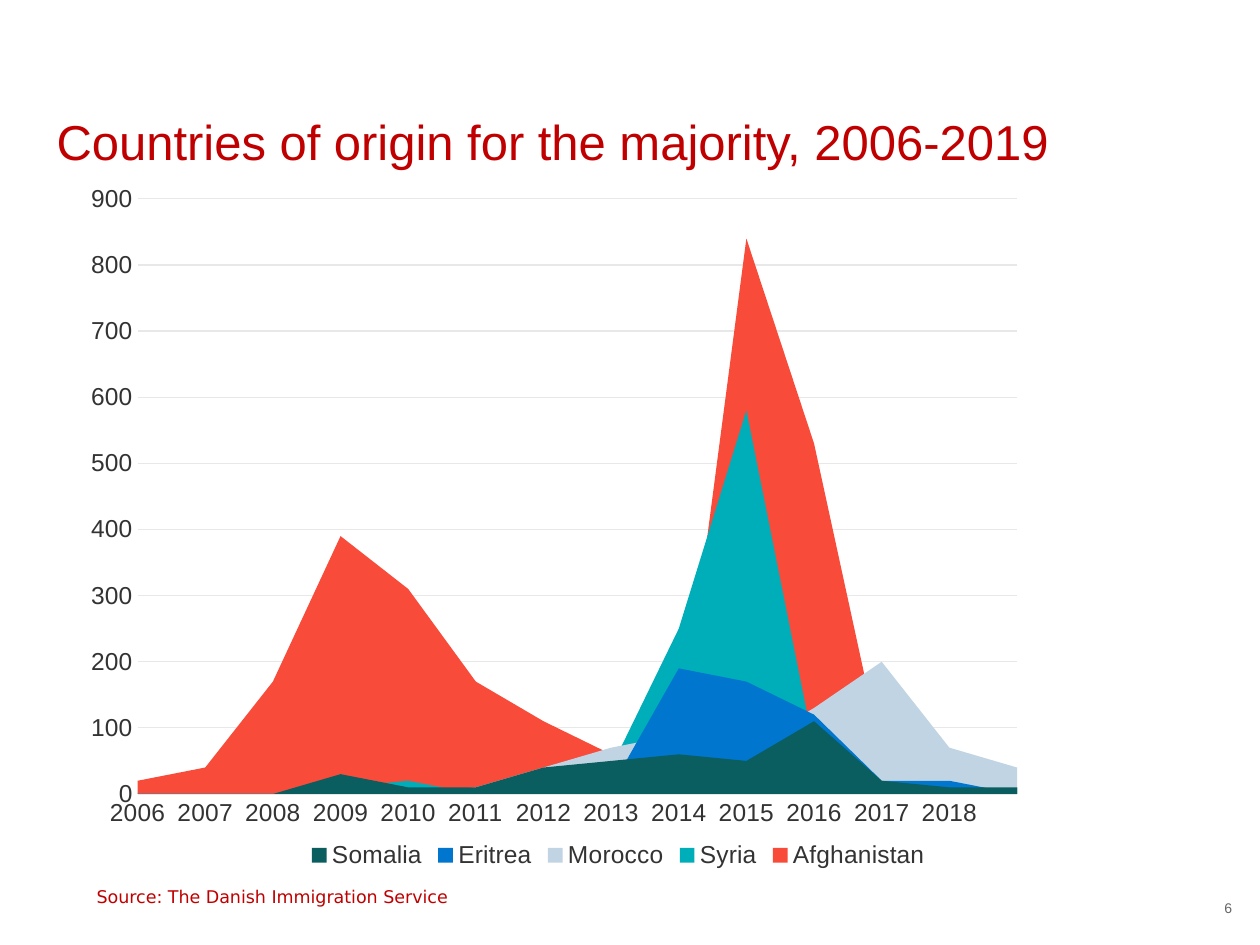
from lxml.etree import SubElement
from pptx import Presentation
from pptx.chart.data import CategoryChartData
from pptx.dml.color import RGBColor
from pptx.enum.chart import XL_CHART_TYPE, XL_LEGEND_POSITION, XL_TICK_MARK
from pptx.enum.text import MSO_ANCHOR, PP_ALIGN
from pptx.oxml.ns import qn
from pptx.util import Cm, Pt

YEARS = [str(year) for year in range(2006, 2019)] + [""]
COUNTRIES = [
    ("Somalia", "0A5E60", [0, 0, 0, 30, 10, 10, 40, 50, 60, 50, 110, 20, 10, 10]),
    ("Eritrea", "0076CE", [None, None, 0, 0, 0, 0, 0, 10, 190, 170, 120, 20, 20, 0]),
    ("Morocco", "C1D4E3", [None, None, 0, 10, 0, 10, 40, 70, 90, 70, 130, 200, 70, 40]),
    ("Syria", "00AEB9", [0, 0, 0, 10, 20, 0, 10, 40, 250, 580, 70, 40, 20, 10]),
    ("Afghanistan", "F94B3A", [20, 40, 170, 390, 310, 170, 110, 60, 60, 840, 530, 60, 20, 10]),
]
PLOT_LAYOUT = {"x": 0.066, "y": 0.02, "w": 0.794, "h": 0.864}


def color(value):
    return RGBColor.from_string(value)


class SlideBuilder:
    font_name = "Arial"
    accent = "C00000"
    chart_text = "333333"
    grid = "E8E8E8"

    def __init__(self, slide):
        self.slide = slide

    def style_font(self, font, size, value, name=None):
        font.name = name or self.font_name
        font.size = Pt(size)
        font.color.rgb = color(value)

    def text(self, box, content, size, value, name=None,
             align=PP_ALIGN.LEFT, anchor=MSO_ANCHOR.TOP, wrap=True):
        shape = self.slide.shapes.add_textbox(*(Cm(length) for length in box))
        frame = shape.text_frame
        frame.word_wrap = wrap
        frame.vertical_anchor = anchor
        paragraph = frame.paragraphs[0]
        paragraph.alignment = align
        run = paragraph.add_run()
        run.text = content
        self.style_font(run.font, size, value, name)

    def area_chart(self, box, categories, countries):
        data = CategoryChartData()
        data.categories = categories
        for name, _, values in countries:
            data.add_series(name, values)
        chart = self.slide.shapes.add_chart(
            XL_CHART_TYPE.AREA, *(Cm(length) for length in box), data).chart
        chart.has_title = False
        self.style_font(chart.font, 14, self.chart_text)
        for series, (_, fill, _) in zip(chart.plots[0].series, countries):
            series.format.fill.solid()
            series.format.fill.fore_color.rgb = color(fill)
            series.format.line.fill.background()
        self.axes(chart)
        self.legend(chart)
        self.plot_layout(chart)

    def axes(self, chart):
        for axis in (chart.category_axis, chart.value_axis):
            axis.major_tick_mark = axis.minor_tick_mark = XL_TICK_MARK.NONE
            self.style_font(axis.tick_labels.font, 14, self.chart_text)
        chart.category_axis.has_major_gridlines = False
        values = chart.value_axis
        values.minimum_scale, values.maximum_scale, values.major_unit = 0, 900, 100
        values.has_major_gridlines = True
        values.format.line.fill.background()
        for line in (chart.category_axis.format.line, values.major_gridlines.format.line):
            line.color.rgb = color(self.grid)
            line.width = Pt(0.75)

    def legend(self, chart):
        chart.has_legend = True
        chart.legend.position = XL_LEGEND_POSITION.BOTTOM
        chart.legend.include_in_layout = False
        self.style_font(chart.legend.font, 14, self.chart_text)

    def plot_layout(self, chart):
        plot_area = chart.element.find(".//" + qn("c:plotArea"))
        plot_area.find(qn("c:valAx")).find(qn("c:crossBetween")).set("val", "midCat")
        layout = plot_area.find(qn("c:layout"))
        if layout is None:
            layout = SubElement(plot_area, qn("c:layout"))
            plot_area.insert(0, layout)
        manual = SubElement(layout, qn("c:manualLayout"))
        settings = {"layoutTarget": "inner", "xMode": "edge", "yMode": "edge", **PLOT_LAYOUT}
        for tag, value in settings.items():
            SubElement(manual, qn("c:" + tag)).set("val", str(value))


def main():
    presentation = Presentation()
    presentation.slide_width, presentation.slide_height = Cm(25.4), Cm(19.05)
    slide = presentation.slides.add_slide(presentation.slide_layouts[6])
    builder = SlideBuilder(slide)
    builder.text((22.63, 17.98, 2.46, 0.64), "6", 8, "666666",
                 align=PP_ALIGN.RIGHT, anchor=MSO_ANCHOR.MIDDLE)
    builder.text((0.89, 2.13, 24.2, 2.39),
                 "Countries of origin for the majority, 2006-2019", 28, builder.accent)
    builder.area_chart((1.3, 3.73, 22.33, 13.89), YEARS, COUNTRIES)
    builder.text((1.7, 17.73, 7.95, 0.69), "Source: The Danish Immigration Service",
                 10, builder.accent, name="DejaVu Sans", wrap=False)
    presentation.save("out.pptx")


if __name__ == "__main__":
    main()
